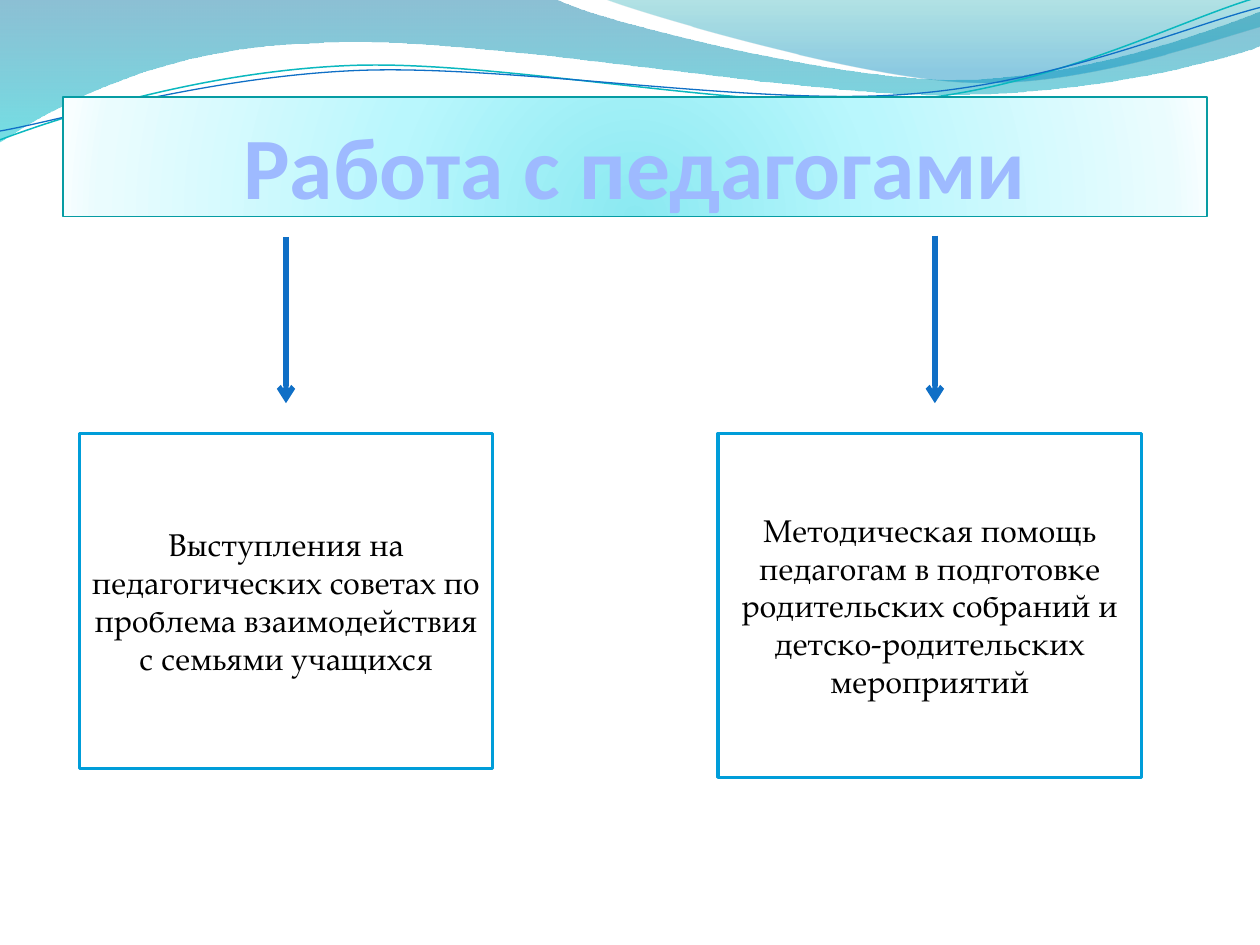
from dataclasses import dataclass
from math import cos, radians, sin

from lxml import etree
from pptx import Presentation
from pptx.dml.color import RGBColor
from pptx.enum.shapes import MSO_CONNECTOR, MSO_SHAPE
from pptx.enum.text import MSO_ANCHOR, PP_ALIGN
from pptx.oxml.ns import qn
from pptx.util import Inches, Pt

STRAIGHT = MSO_CONNECTOR.STRAIGHT
RECTANGLE = MSO_SHAPE.RECTANGLE
CENTER = PP_ALIGN.CENTER
MIDDLE, BOTTOM = MSO_ANCHOR.MIDDLE, MSO_ANCHOR.BOTTOM
TITLE_ONLY = 5
WAVE_TILT = 2.7  # degrees, counter-clockwise

Point = tuple[float, float]
Segment = tuple[Point, ...]  # one point is a line, three are a cubic Bézier


@dataclass
class Stop:
    position: int
    color: str
    opacity: int = 100


@dataclass
class Outline:
    start: Point
    segments: list[Segment]


@dataclass
class Wave:
    outline: Outline
    center: Point
    color: str
    width: float


@dataclass
class Card:
    left: float
    width: float
    height: float
    text: str


@dataclass
class Arrow:
    start: Point
    end: Point


def rgb(color: str) -> RGBColor:
    return RGBColor.from_string(color)


def set_line(shape, color: str, width: float) -> None:
    shape.line.color.rgb = rgb(color)
    shape.line.width = Pt(width)


def set_gradient(shape, stops: list[Stop], circular: bool = False) -> None:
    """Fill a shape with a downward or a circular gradient."""
    shape.fill.background()
    gradient = etree.Element(qn("a:gradFill"), rotWithShape="1")
    stop_list = etree.SubElement(gradient, qn("a:gsLst"))
    for stop in stops:
        item = etree.SubElement(stop_list, qn("a:gs"), pos=str(stop.position * 1000))
        color = etree.SubElement(item, qn("a:srgbClr"), val=stop.color)
        if stop.opacity < 100:
            etree.SubElement(color, qn("a:alpha"), val=str(stop.opacity * 1000))
    if circular:
        route = etree.SubElement(gradient, qn("a:path"), path="circle")
        etree.SubElement(route, qn("a:fillToRect"),
                         l="50000", t="130000", r="50000", b="-30000")
    else:
        etree.SubElement(gradient, qn("a:lin"), ang="5400000", scaled="0")
    properties = shape._element.spPr
    properties.replace(properties.find(qn("a:noFill")), gradient)


def add_outline(slide, outline: Outline, closed: bool):
    """Build a freeform, then join its point triples into Bézier curves."""
    points = [outline.start] + [point for segment in outline.segments for point in segment]
    corners = [(Inches(x), Inches(y)) for x, y in points]
    builder = slide.shapes.build_freeform(*corners[0], scale=1.0)
    builder.add_line_segments(corners[1:], close=closed)
    shape = builder.convert_to_shape()
    shape.shadow.inherit = False
    lines = iter(list(shape._element.spPr.iter(qn("a:lnTo"))))
    for segment in outline.segments:
        parts = [next(lines) for _ in segment]
        if len(parts) == 3:
            curve = etree.Element(qn("a:cubicBezTo"))
            parts[0].addprevious(curve)
            for part in parts:
                curve.append(part[0])
                part.getparent().remove(part)
    return shape


def add_band(slide, outline: Outline, stops: list[Stop]) -> None:
    shape = add_outline(slide, outline, closed=True)
    set_gradient(shape, stops)
    shape.line.fill.background()


def add_wave(slide, wave: Wave) -> None:
    """Level the wave about its center, then tilt the finished shape."""
    cosine, sine = cos(radians(WAVE_TILT)), sin(radians(WAVE_TILT))
    center_x, center_y = wave.center

    def level(point: Point) -> Point:
        x, y = point[0] - center_x, point[1] - center_y
        return center_x + x * cosine - y * sine, center_y + x * sine + y * cosine

    segments = [tuple(map(level, segment)) for segment in wave.outline.segments]
    shape = add_outline(slide, Outline(level(wave.outline.start), segments), closed=False)
    shape.rotation = 360 - WAVE_TILT
    shape.fill.background()
    set_line(shape, wave.color, wave.width)


def write(shape, text: str, font_name: str, size: float, color: str, bold: bool) -> None:
    shape.text_frame.word_wrap = True
    paragraph = shape.text_frame.paragraphs[0]
    paragraph.alignment = CENTER
    run = paragraph.add_run()
    run.text = text
    run.font.name = font_name
    run.font.size = Pt(size)
    run.font.bold = bold
    run.font.color.rgb = rgb(color)


def add_title(slide, text: str) -> None:
    title = slide.shapes.title
    title.left, title.top = Inches(0.5), Inches(0.77)
    title.width, title.height = Inches(9.08), Inches(0.95)
    set_gradient(title, [Stop(0, "8BE9F1"), Stop(43, "B9F7FD"),
                         Stop(93, "EAFCFE"), Stop(100, "F8FEFF")], circular=True)
    set_line(title, "069CA3", 0.75)
    frame = title.text_frame
    frame.vertical_anchor = BOTTOM
    frame.margin_left = frame.margin_right = frame.margin_bottom = 0
    frame.margin_top = Inches(0.05)
    write(title, text, "Calibri", 50, "9EBAFF", True)
    slide.shapes._spTree.append(title._element)  # in front of the waves


def add_arrow(slide, arrow: Arrow) -> None:
    ends = [Inches(value) for value in arrow.start + arrow.end]
    connector = slide.shapes.add_connector(STRAIGHT, *ends)
    set_line(connector, "0F6FC6", 3)
    etree.SubElement(connector.line._get_or_add_ln(), qn("a:tailEnd"), type="arrow")
    etree.SubElement(connector._element.spPr, qn("a:effectLst"))


def add_card(slide, card: Card) -> None:
    shape = slide.shapes.add_shape(RECTANGLE, Inches(card.left), Inches(3.44),
                                   Inches(card.width), Inches(card.height))
    shape.shadow.inherit = False
    shape.fill.solid()
    shape.fill.fore_color.rgb = rgb("FFFFFF")
    set_line(shape, "009DD9", 2)
    shape.text_frame.vertical_anchor = MIDDLE
    write(shape, card.text, "TeX Gyre Pagella", 18, "000000", False)


LONG_BAND = Outline((0, 0), [
    ((4.4, -0.01),), ((4.76, 0.17), (6.64, 0.63), (7.58, 0.63)),
    ((8.53, 0.63), (9.58, 0.26), (10, 0.09)), ((10.01, 0.36),),
    ((9.83, 0.44), (8.7, 0.76), (7.46, 0.75)), ((6.22, 0.75), (3.82, 0.28), (2.57, 0.34)),
    ((1.29, 0.36), (0.46, 0.83), (-0.01, 1.13)), ((0, 0),)])
CORNER_BAND = Outline((4.79, -0.01), [
    ((5.09, 0.11), (6.82, 0.62), (7.69, 0.65)), ((8.56, 0.69), (9.61, 0.32), (10, 0.21)),
    ((10, 0),), ((4.79, -0.01),)])
WAVES = [
    Wave(Outline((0, 1.11), [((0.48, 0.93), (1.58, 0.57), (2.77, 0.52)),
                             ((3.95, 0.47), (5.93, 0.89), (7.13, 0.8)),
                             ((8.33, 0.71), (9.38, 0.15), (9.98, -0.02))]),
         (4.99, 0.57), "0AB8BF", 0.85),
    Wave(Outline((0, 1.04), [((0.47, 0.96), (1.64, 0.61), (2.83, 0.56)),
                             ((4.03, 0.51), (5.97, 0.84), (7.17, 0.75)),
                             ((8.36, 0.67), (9.41, 0.21), (10, 0.06))]),
         (5, 0.59), "0F6FC6", 0.75),
]
ARROWS = [Arrow((2.27, 1.88), (2.27, 3.2)), Arrow((7.42, 1.87), (7.42, 3.2))]
CARDS = [
    Card(0.63, 3.28, 2.66, "Выступления на педагогических советах по проблема "
                           "взаимодействия с семьями учащихся"),
    Card(5.7, 3.36, 2.73, "Методическая помощь педагогам в подготовке родительских "
                          "собраний и детско-родительских мероприятий"),
]


def main() -> None:
    presentation = Presentation()
    presentation.slide_width, presentation.slide_height = Inches(10), Inches(7.5)
    slide = presentation.slides.add_slide(presentation.slide_layouts[TITLE_ONLY])
    # Waves along the top edge
    add_band(slide, LONG_BAND, [Stop(0, "0074A1", 45), Stop(100, "00C6CF", 55)])
    add_band(slide, CORNER_BAND, [Stop(0, "00A1A9", 30), Stop(80, "008BBF", 45)])
    for wave in WAVES:
        add_wave(slide, wave)
    # Heading, and the two directions of work under it
    add_title(slide, "Работа с педагогами")
    for arrow in ARROWS:
        add_arrow(slide, arrow)
    for card in CARDS:
        add_card(slide, card)
    presentation.save("out.pptx")


if __name__ == "__main__":
    main()
